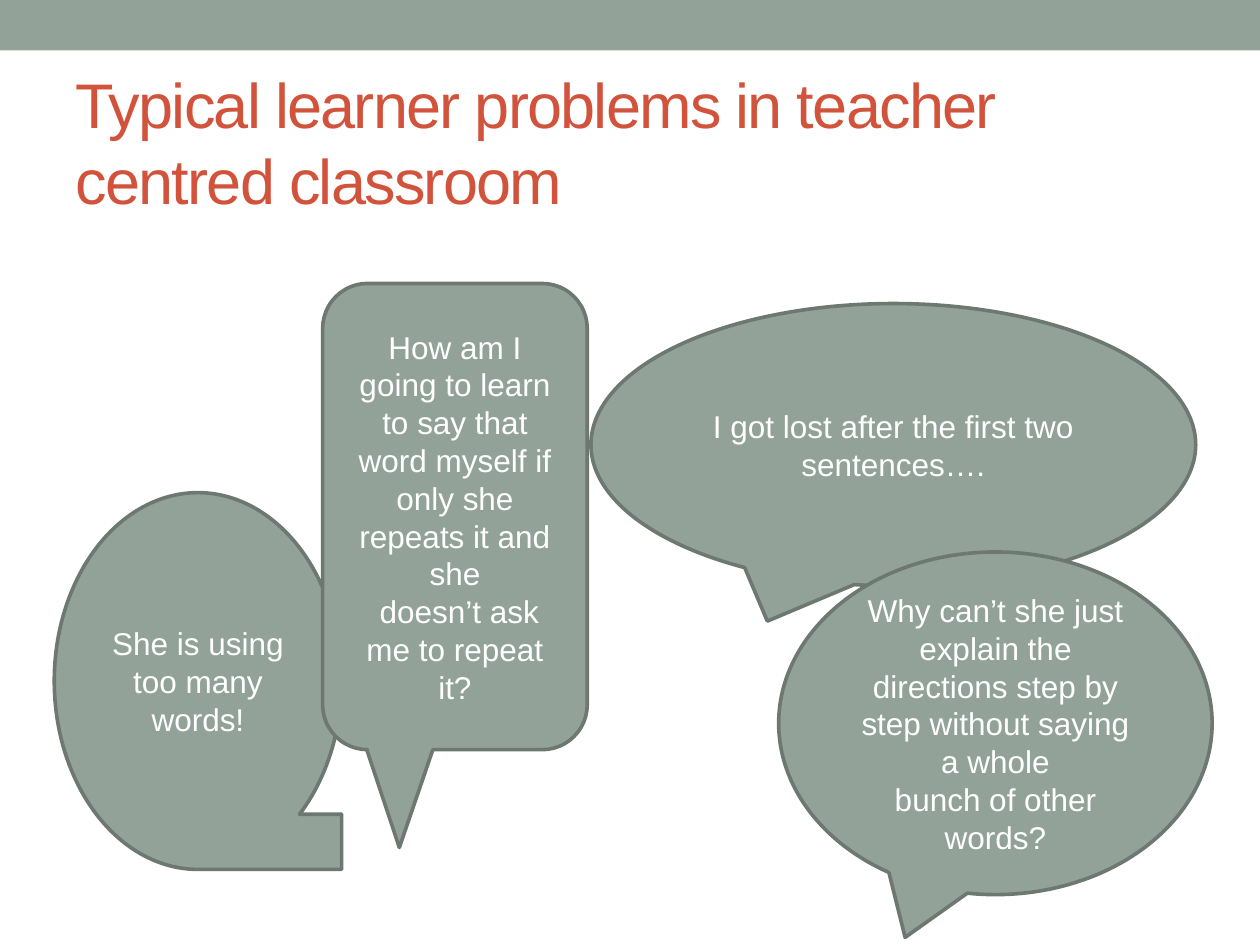
from dataclasses import dataclass

from pptx import Presentation
from pptx.dml.color import RGBColor
from pptx.enum import shapes, text
from pptx.util import Pt

SHAPE = shapes.MSO_SHAPE


@dataclass(frozen=True)
class Theme:
    """Colours, font and sizes of the slide."""
    sage: str = "93A299"
    edge: str = "6D7871"
    red: str = "D2533C"
    white: str = "FFFFFF"
    font: str = "Arial"
    title_size: float = 36
    body_size: float = 18
    line_width: float = 2.08


THEME = Theme()


def write(tf, *lines, size, color, align, spacing=None):
    """Fill a text frame with one formatted paragraph per line."""
    tf.word_wrap = True
    tf.auto_size = text.MSO_AUTO_SIZE.NONE
    tf.vertical_anchor = text.MSO_ANCHOR.MIDDLE
    for i, line in enumerate(lines):
        p = tf.add_paragraph() if i else tf.paragraphs[0]
        p.alignment = align
        r = p.add_run()
        r.text = line
        r.font.name = THEME.font
        r.font.size = Pt(size)
        r.font.color.rgb = RGBColor.from_string(color)
        if spacing is not None:
            r.font._element.set("spc", str(int(spacing * 100)))


def add_filled(s, kind, box, line=None):
    """Add a flat sage shape in the box, outlined if a line colour is given."""
    sp = s.shapes.add_shape(kind, *map(Pt, box))
    sp.shadow.inherit = False
    sp.fill.solid()
    sp.fill.fore_color.rgb = RGBColor.from_string(THEME.sage)
    if line:
        sp.line.color.rgb = RGBColor.from_string(line)
        sp.line.width = Pt(THEME.line_width)
    else:
        sp.line.fill.background()
    return sp


def add_title(s, box, title):
    """Move and format the title placeholder."""
    sp = s.shapes.title
    sp.left, sp.top, sp.width, sp.height = map(Pt, box)
    write(sp.text_frame, title, size=THEME.title_size, color=THEME.red,
          align=text.PP_ALIGN.LEFT, spacing=-1)


def add_bubble(s, kind, box, lines, adjustments=()):
    """Add a speech bubble with centred text."""
    sp = add_filled(s, kind, box, THEME.edge)
    for i, value in enumerate(adjustments):
        sp.adjustments[i] = value
    write(sp.text_frame, *lines, size=THEME.body_size, color=THEME.white,
          align=text.PP_ALIGN.CENTER)


def add_bubbles(s, box):
    """Place the learners' complaints relative to the box."""
    left, top, _, _ = box
    bubbles = [
        (SHAPE.FLOWCHART_SEQUENTIAL_ACCESS_STORAGE, (0, 119.5, 164.2, 215.3),
         ["She is using too many words!"], ()),
        (SHAPE.OVAL_CALLOUT, (306.7, 11.5, 345.6, 161.3),
         ["I got lost after the first two sentences…."], ()),
        (SHAPE.OVAL_CALLOUT, (414, 153.4, 247.7, 195.8),
         ["Why can’t she just explain the directions step by step "
          "without saying a whole", "bunch of other words?"], ()),
        (SHAPE.ROUNDED_RECTANGULAR_CALLOUT, (153.4, 0, 151.2, 266.4),
         ["How am I going to learn to say that word myself if only she "
          "repeats it and she", " doesn’t ask me to repeat it?"],
         (-0.21, 0.71, 0.17)),
    ]
    for kind, (x, y, w, h), lines, adjustments in bubbles:
        add_bubble(s, kind, (left + x, top + y, w, h), lines, adjustments)


def main():
    """Build and save the slide."""
    prs = Presentation()
    prs.slide_width, prs.slide_height = Pt(720), Pt(540)
    s = prs.slides.add_slide(prs.slide_layouts.get_by_name("Title Only"))
    add_filled(s, SHAPE.RECTANGLE, (0, 0, 720, 28.8))
    add_title(s, (36, 41.8, 648, 77.8),
              "Typical learner problems in teacher centred classroom")
    add_bubbles(s, (31, 162, 661.7, 349.2))
    prs.save("out.pptx")


if __name__ == "__main__":
    main()
